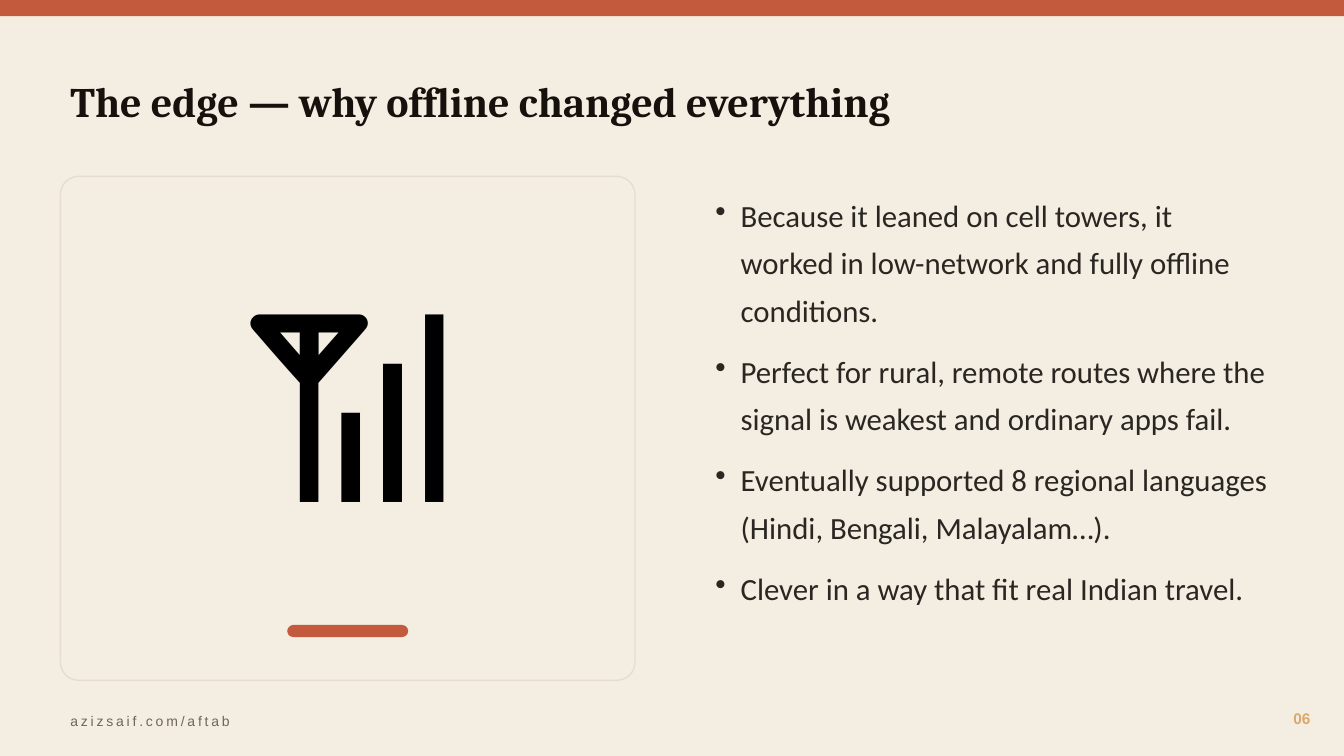
from dataclasses import dataclass

from lxml import etree
from pptx import Presentation
from pptx import util as u
from pptx.dml.color import RGBColor
from pptx.enum import shapes, text
from pptx.oxml import ns


@dataclass(frozen=True)
class Theme:
    paper: str = "F4EDE2"
    accent: str = "C45A3D"
    border: str = "E4DDD0"
    heading: str = "16110D"
    body: str = "2A2622"
    symbol: str = "000000"
    number: str = "D9A86C"
    muted: str = "6E665C"
    heading_font: str = "Cambria"
    body_font: str = "Calibri"
    footer_font: str = "Arial"
    heading_size: int = 30
    body_size: int = 22
    symbol_size: int = 150
    number_size: int = 11
    footer_size: int = 10


class SlideBuilder:
    def __init__(self, slide, theme):
        self.slide = slide
        self.theme = theme
        fill = slide.background.fill
        fill.solid()
        fill.fore_color.rgb = RGBColor.from_string(theme.paper)

    def block(self, box, color, corner=None, border=None):
        """Draw a filled rectangle, rounded when corner is given."""
        kind = shapes.MSO_SHAPE.RECTANGLE if corner is None else shapes.MSO_SHAPE.ROUNDED_RECTANGLE
        shape = self.slide.shapes.add_shape(kind, *map(u.Pt, box))
        shape.shadow.inherit = False
        shape.fill.solid()
        shape.fill.fore_color.rgb = RGBColor.from_string(color)
        if corner is not None:
            shape.adjustments[0] = corner
        if border:
            shape.line.color.rgb = RGBColor.from_string(border)
            shape.line.width = u.Pt(1)
        else:
            shape.line.fill.background()

    def label(self, box, lines, font, size, color, bold=False, align=text.PP_ALIGN.LEFT,
              anchor=text.MSO_ANCHOR.MIDDLE, tracking=0):
        """Add a text box with one paragraph per line; tracking is in points."""
        frame = self.slide.shapes.add_textbox(*map(u.Pt, box)).text_frame
        frame.word_wrap = True
        frame.vertical_anchor = anchor
        frame.text = "\n".join(lines)
        for paragraph in frame.paragraphs:
            paragraph.alignment = align
            for run in paragraph.runs:
                run.font.name = font
                run.font.size = u.Pt(size)
                run.font.bold = bold
                run.font.color.rgb = RGBColor.from_string(color)
                if tracking:
                    run._r.get_or_add_rPr().set("spc", str(tracking * 100))
        return frame

    def bullets(self, box, lines):
        theme = self.theme
        frame = self.label(box, lines, theme.body_font, theme.body_size, theme.body,
                           anchor=text.MSO_ANCHOR.TOP)
        indent = u.Pt(18)
        for paragraph in frame.paragraphs:
            paragraph.line_spacing = 1.28
            paragraph.space_after = u.Pt(10)
            properties = paragraph._p.get_or_add_pPr()
            properties.set("marL", str(indent))
            properties.set("indent", str(-indent))
            etree.SubElement(properties, ns.qn("a:buChar")).set("char", "•")


def main():
    presentation = Presentation()
    presentation.slide_width = u.Pt(960)
    presentation.slide_height = u.Pt(540)
    theme = Theme()
    builder = SlideBuilder(presentation.slides.add_slide(presentation.slide_layouts[6]), theme)

    margin, card_width = 43.2, 410.4
    accent_width = 86.4
    accent_left = margin + (card_width - accent_width) / 2

    builder.block((0, 0, 960, 11.52), theme.accent)
    builder.label((margin, 36, 871.2, 72), ["The edge — why offline changed everything"],
                  theme.heading_font, theme.heading_size, theme.heading, bold=True)

    builder.block((margin, 126, card_width, 360), theme.paper, corner=0.036, border=theme.border)
    builder.label((margin, 126, card_width, 295.2), ["📶"], theme.body_font,
                  theme.symbol_size, theme.symbol, align=text.PP_ALIGN.CENTER)
    builder.block((accent_left, 446.4, accent_width, 8.64), theme.accent, corner=0.5)

    builder.bullets((504, 129.6, card_width, 360), [
        "Because it leaned on cell towers, it worked in low-network and fully offline conditions.",
        "Perfect for rural, remote routes where the signal is weakest and ordinary apps fail.",
        "Eventually supported 8 regional languages (Hindi, Bengali, Malayalam…).",
        "Clever in a way that fit real Indian travel.",
    ])

    builder.label((878.4, 500.4, 64.8, 25.2), ["06"], theme.footer_font, theme.number_size,
                  theme.number, bold=True, align=text.PP_ALIGN.RIGHT)
    builder.label((margin, 504, 576, 21.6), ["azizsaif.com/aftab"], theme.footer_font,
                  theme.footer_size, theme.muted, tracking=2)

    presentation.save("out.pptx")


if __name__ == "__main__":
    main()
